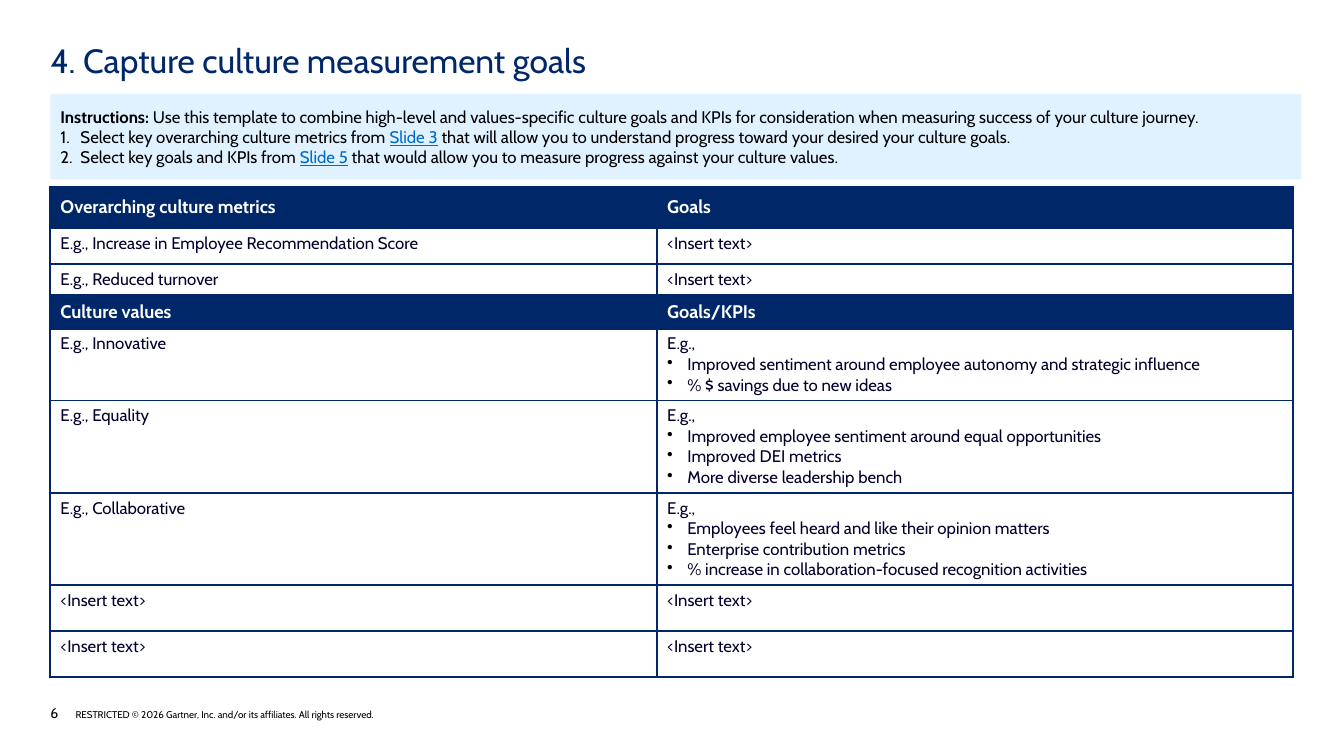
from pptx import Presentation
from pptx.dml.color import RGBColor
from pptx.enum import shapes, text
from pptx.oxml import parse_xml
from pptx.oxml.ns import nsdecls
from pptx.util import Pt

FONT = "Cabin"
NAVY = RGBColor(0x00, 0x28, 0x69)
INK = RGBColor(0x00, 0x00, 0x2D)
BLACK = RGBColor(0x00, 0x00, 0x00)
WHITE = RGBColor(0xFF, 0xFF, 0xFF)
LINK = RGBColor(0x00, 0x6A, 0xC7)
PALE_BLUE = RGBColor(0xE0, 0xF1, 0xFF)

LEFT = Pt(36)
BULLET = '<a:buChar {} char="•"/>'
NUMBER = '<a:buAutoNum {} type="arabicPeriod"/>'
INSERT = "<Insert text>"

INSTRUCTIONS = [
    ("Instructions: ", "Use this template to combine high-level and values-specific culture goals "
     "and KPIs for consideration when measuring success of your culture journey."),
    ("Select key overarching culture metrics from ", "Slide 3",
     " that will allow you to understand progress toward your desired your culture goals."),
    ("Select key goals and KPIs from ", "Slide 5",
     " that would allow you to measure progress against your culture values."),
]

# Row height, left text, right lines; lines after the first are bullets
ROWS = [
    (29.3, "Overarching culture metrics", ["Goals"]),
    (25.7, "E.g., Increase in Employee Recommendation Score", [INSERT]),
    (22.1, "E.g., Reduced turnover", [INSERT]),
    (24.3, "Culture values", ["Goals/KPIs"]),
    (51.4, "E.g., Innovative", [
        "E.g.,",
        "Improved sentiment around employee autonomy and strategic influence",
        "% $ savings due to new ideas"]),
    (65.7, "E.g., Equality", [
        "E.g.,",
        "Improved employee sentiment around equal opportunities",
        "Improved DEI metrics",
        "More diverse leadership bench"]),
    (65.7, "E.g., Collaborative", [
        "E.g.,",
        "Employees feel heard and like their opinion matters",
        "Enterprise contribution metrics",
        "% increase in collaboration-focused recognition activities"]),
    (32.9, INSERT, [INSERT]),
    (32.9, INSERT, [INSERT]),
]
HEADER_ROWS = (0, 3)
COLUMN_WIDTHS = (433.4, 454.3)


def style(run, size, color, bold=False, underline=False):
    font = run.font
    font.name, font.size, font.bold = FONT, Pt(size), bold
    font.underline = underline
    font.color.rgb = color


def hang(p, indent, marker=None):
    """Give a paragraph a hanging indent and, if wanted, a list marker."""
    pPr = p._p.get_or_add_pPr()
    pPr.set("marL", str(Pt(indent)))
    pPr.set("indent", str(-Pt(indent)))
    if marker:
        pPr.append(parse_xml(f'<a:buClr {nsdecls("a")}><a:srgbClr val="{BLACK}"/></a:buClr>'))
        pPr.append(parse_xml(marker.format(nsdecls("a"))))


def next_paragraph(tf, index):
    return tf.paragraphs[0] if index == 0 else tf.add_paragraph()


def add_run(p, words, *args, **kwargs):
    r = p.add_run()
    r.text = words
    style(r, *args, **kwargs)


def clear_margins(tf):
    tf.margin_left = tf.margin_right = tf.margin_top = tf.margin_bottom = 0


def add_title(slide, words):
    sp = slide.shapes.title
    sp.left, sp.top, sp.width, sp.height = LEFT, Pt(28.8), Pt(769), Pt(35.3)
    tf = sp.text_frame
    tf.text = words
    tf.auto_size = text.MSO_AUTO_SIZE.NONE
    tf.vertical_anchor = text.MSO_ANCHOR.TOP
    clear_margins(tf)
    p = tf.paragraphs[0]
    p.alignment = text.PP_ALIGN.LEFT
    style(p.runs[0], 24, NAVY)


def add_instructions(slide):
    sp = slide.shapes.add_shape(shapes.MSO_SHAPE.RECTANGLE, LEFT, Pt(67), Pt(893.5), Pt(61.2))
    sp.shadow.inherit = False
    sp.fill.solid()
    sp.fill.fore_color.rgb = PALE_BLUE
    sp.line.fill.background()
    tf = sp.text_frame
    tf.word_wrap = True
    tf.vertical_anchor = text.MSO_ANCHOR.MIDDLE
    for i, parts in enumerate(INSTRUCTIONS):
        p = next_paragraph(tf, i)
        p.alignment = text.PP_ALIGN.LEFT
        if i > 0:
            hang(p, 14.4, NUMBER)
        for j, words in enumerate(parts):
            is_link = i > 0 and j == 1
            add_run(p, words, 12, LINK if is_link else BLACK,
                    bold=i == j == 0, underline=is_link)


def add_borders(cell):
    tcPr = cell._tc.get_or_add_tcPr()
    for side in "LRTB":
        tcPr.append(parse_xml(
            f'<a:ln{side} {nsdecls("a")} w="{Pt(1.5)}"><a:solidFill>'
            f'<a:srgbClr val="{NAVY}"/></a:solidFill></a:ln{side}>'))


def fill_cell(cell, lines, is_header):
    add_borders(cell)
    if is_header:
        cell.fill.solid()
        cell.fill.fore_color.rgb = NAVY
        cell.vertical_anchor = text.MSO_ANCHOR.MIDDLE
    else:
        cell.fill.background()
        cell.vertical_anchor = text.MSO_ANCHOR.TOP
    for i, line in enumerate(lines):
        p = next_paragraph(cell.text_frame, i)
        if i > 0:
            hang(p, 14.4, BULLET)
        add_run(p, line, 13 if is_header else 12, WHITE if is_header else INK, bold=is_header)


def add_goals_table(slide):
    height = sum(row[0] for row in ROWS)
    table = slide.shapes.add_table(len(ROWS), 2, LEFT, Pt(133.4),
                                   Pt(sum(COLUMN_WIDTHS)), Pt(height)).table
    table.horz_banding = False
    for column, width in zip(table.columns, COLUMN_WIDTHS):
        column.width = Pt(width)
    for i, (row_height, label, goals) in enumerate(ROWS):
        table.rows[i].height = Pt(row_height)
        fill_cell(table.cell(i, 0), [label], i in HEADER_ROWS)
        fill_cell(table.cell(i, 1), goals, i in HEADER_ROWS)


def add_footer(slide, number, notice):
    sp = slide.shapes.add_textbox(LEFT, Pt(503.3), Pt(575.3), Pt(12.2))
    tf = sp.text_frame
    tf.word_wrap = True
    tf.vertical_anchor = text.MSO_ANCHOR.BOTTOM
    clear_margins(tf)
    p = tf.paragraphs[0]
    hang(p, 18)
    add_run(p, number, 10, BLACK)
    add_run(p, "\t" + notice, 7, BLACK)


def main():
    prs = Presentation()
    prs.slide_width, prs.slide_height = Pt(960), Pt(540)
    slide = prs.slides.add_slide(prs.slide_layouts.get_by_name("Title Only"))

    add_title(slide, "4. Capture culture measurement goals")
    add_goals_table(slide)
    add_instructions(slide)
    add_footer(slide, "6",
               "RESTRICTED © 2026 Gartner, Inc. and/or its affiliates. All rights reserved.")

    prs.save("out.pptx")


if __name__ == "__main__":
    main()
